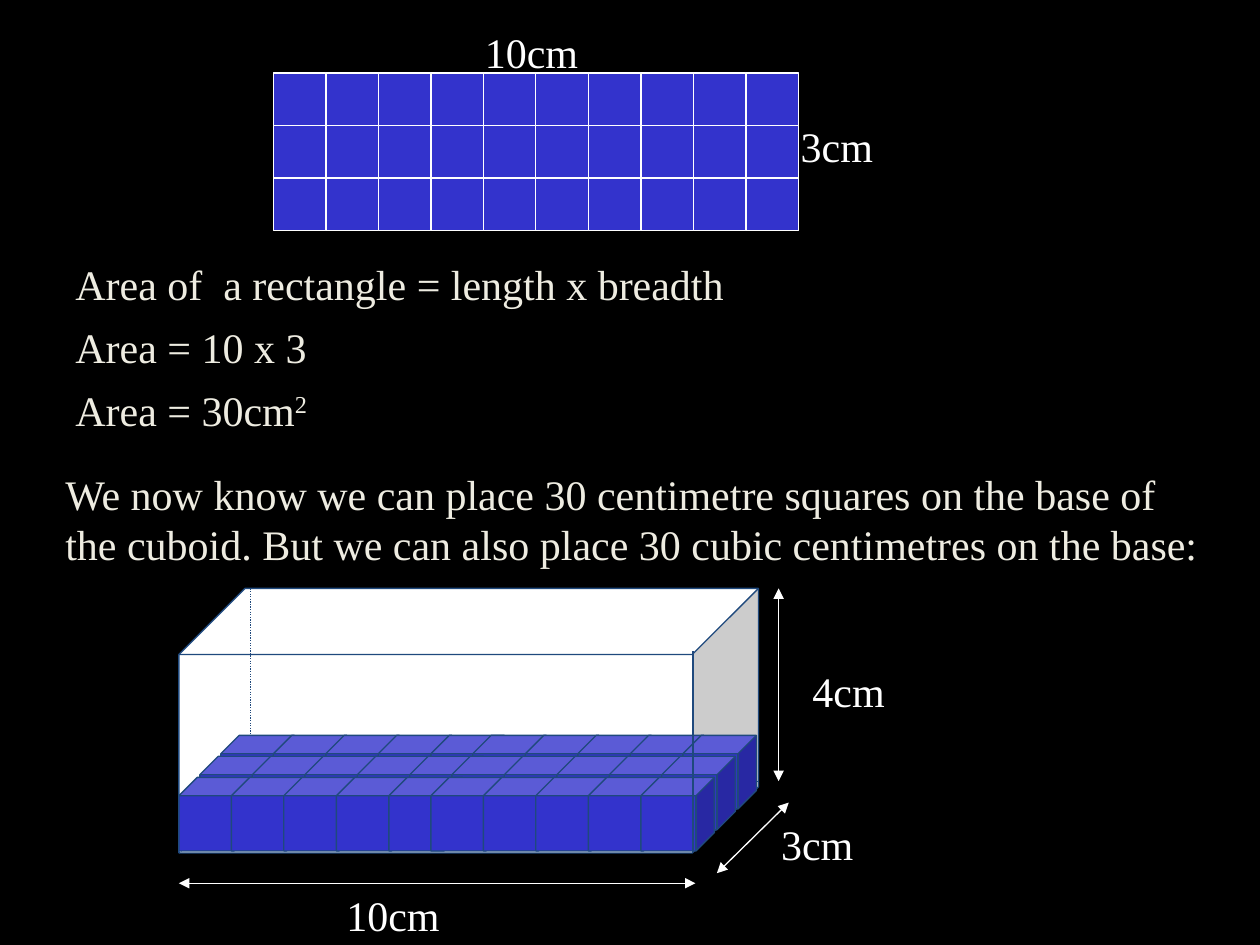
from lxml import etree
from pptx import Presentation
from pptx.dml.color import RGBColor
from pptx.enum.dml import MSO_LINE
from pptx.enum.shapes import MSO_CONNECTOR, MSO_SHAPE
from pptx.oxml.ns import qn
from pptx.util import Inches, Pt

RECTANGLE, CUBE = MSO_SHAPE.RECTANGLE, MSO_SHAPE.CUBE
STRAIGHT, DOTTED = MSO_CONNECTOR.STRAIGHT, MSO_LINE.ROUND_DOT
COLORS = {
    "background": "000000",
    "label": "FFFFFF",
    "body": "EEECE1",
    "unit": "3333CC",
    "cuboid": "FFFFFF",
    "edge": "1F497D",
}
LENGTH_UNITS, BREADTH_UNITS = 10, 3
UNIT = 5 / 12
CUBE_SIZE = 7 / 12
DEPTH_STEP = 1 / 6


def color(name):
    return RGBColor.from_string(COLORS[name])


def add_text(slide, text, left, top, width, height=0.5, color_name="label", superscript=""):
    frame = slide.shapes.add_textbox(
        Inches(left), Inches(top), Inches(width), Inches(height)).text_frame
    frame.word_wrap = True
    paragraph = frame.paragraphs[0]
    for part in filter(None, (text, superscript)):
        run = paragraph.add_run()
        run.text = part
        formats = {"name": "Times New Roman", "size": Pt(24)}
        for attribute, value in formats.items():
            setattr(run.font, attribute, value)
        run.font.color.rgb = color(color_name)
    if superscript:
        run.font._element.set("baseline", "30000")


def add_solid(slide, kind, left, top, width, height, fill, line):
    shape = slide.shapes.add_shape(
        kind, Inches(left), Inches(top), Inches(width), Inches(height))
    shape.shadow.inherit = False
    shape.fill.solid()
    shape.fill.fore_color.rgb = color(fill)
    shape.line.color.rgb = color(line)
    shape.line.width = Pt(0.75)


def add_line(slide, start, end, color_name="edge", dash=None, arrows=False):
    connector = slide.shapes.add_connector(
        STRAIGHT, *(Inches(value) for value in (*start, *end)))
    connector.line.color.rgb = color(color_name)
    connector.line.width = Pt(0.75)
    if dash:
        connector.line.dash_style = dash
    if arrows:
        outline = connector.line._get_or_add_ln()
        for tag in ("a:headEnd", "a:tailEnd"):
            etree.SubElement(outline, qn(tag), type="triangle")
    etree.SubElement(connector._element.spPr, qn("a:effectLst"))


def add_cuboid(slide, left, top, width, height):
    """Draw the open cuboid, its hidden edges and its dimension arrows."""
    right, bottom = left + width, top + height
    depth = 0.57
    back_left, back_bottom = left + depth, bottom - depth
    add_text(slide, "10cm", left + 1.23, bottom + 0.24, 0.99)
    add_text(slide, "3cm", right + 0.08, bottom - 0.32, 0.82)
    add_text(slide, "4cm", right + 0.33, top + 0.56, 0.9)
    add_solid(slide, CUBE, left, top, width, height, "cuboid", "edge")

    hidden_corner = (back_left, back_bottom)
    for corner in ((left, bottom), (back_left, top), (right, back_bottom)):
        add_line(slide, corner, hidden_corner, dash=DOTTED)

    arrows = (
        ((left, bottom + 0.24), (right - 0.5, bottom + 0.24)),
        ((right - 0.33, bottom + 0.16), (right + 0.24, bottom - 0.4)),
        ((right + 0.16, top), (right + 0.16, back_bottom)),
    )
    for start, end in arrows:
        add_line(slide, start, end, "label", arrows=True)


def add_cube_row(slide, left, top):
    """Lay a row of unit cubes; the second half overlaps the first slightly."""
    for column in range(LENGTH_UNITS):
        overlap = 1 / 12 if column >= LENGTH_UNITS // 2 else 0
        add_solid(slide, CUBE, left + column * UNIT - overlap, top,
                  CUBE_SIZE, CUBE_SIZE, "unit", "edge")


def add_base_layer(slide, left, top):
    """Lay the rows from back to front; left and top belong to the front row."""
    for row in reversed(range(BREADTH_UNITS)):
        add_cube_row(slide, left + row * DEPTH_STEP, top - row * DEPTH_STEP)
    add_line(slide, (5.5, 5.17), (5.5, 6.75))


def add_square_grid(slide, left, top):
    width, height = LENGTH_UNITS * UNIT, BREADTH_UNITS * UNIT
    add_solid(slide, RECTANGLE, left, top, width, height, "unit", "unit")
    add_text(slide, "3cm", left + width - 0.08, top + 0.33, 0.83)
    add_text(slide, "10cm", left + 1.58, top - 0.42, 1)
    for row in reversed(range(BREADTH_UNITS)):
        for column in range(LENGTH_UNITS):
            add_solid(slide, RECTANGLE, left + column * UNIT, top + row * UNIT,
                      UNIT, UNIT, "unit", "label")


def add_working(slide, left, top):
    lines = (
        ("Area of  a rectangle = length x breadth", "", 5.83),
        ("Area = 10 x 3", "", 2.33),
        ("Area = 30cm", "2", 2.5),
    )
    for index, (text, superscript, width) in enumerate(lines):
        add_text(slide, text, left, top + index * 0.5, width,
                 color_name="body", superscript=superscript)
    add_text(
        slide,
        "We now know we can place 30 centimetre squares on the base of the cuboid. "
        "But we can also place 30 cubic centimetres on the base:",
        left - 0.08, top + 1.67, 9.25, 0.9, "body")


def main():
    presentation = Presentation()
    presentation.slide_width, presentation.slide_height = Inches(10), Inches(7.5)
    slide = presentation.slides.add_slide(presentation.slide_layouts[6])
    slide.background.fill.solid()
    slide.background.fill.fore_color.rgb = color("background")
    add_cuboid(slide, 1.42, 4.67, 4.6, 2.1)
    add_base_layer(slide, 1.42, 6.17)
    add_square_grid(slide, 2.17, 0.58)
    add_working(slide, 0.5, 2)
    presentation.save("out.pptx")


if __name__ == "__main__":
    main()
